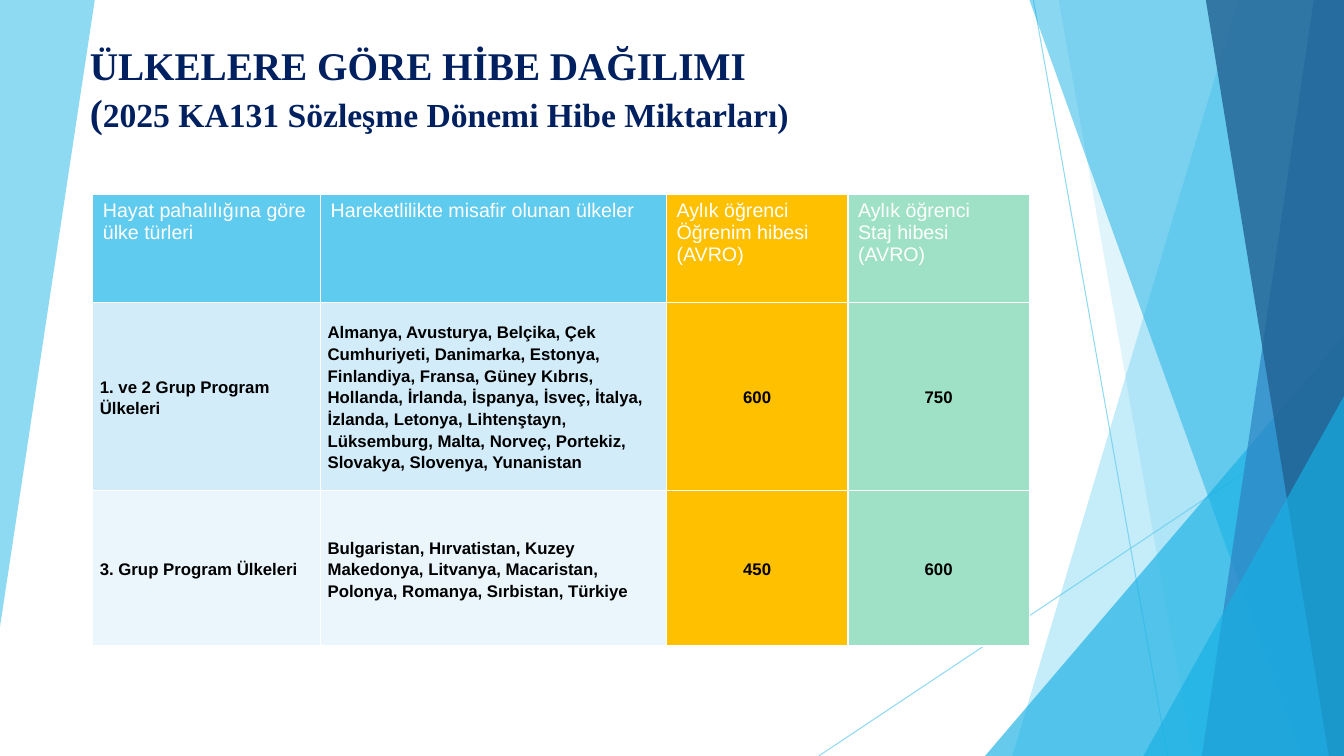
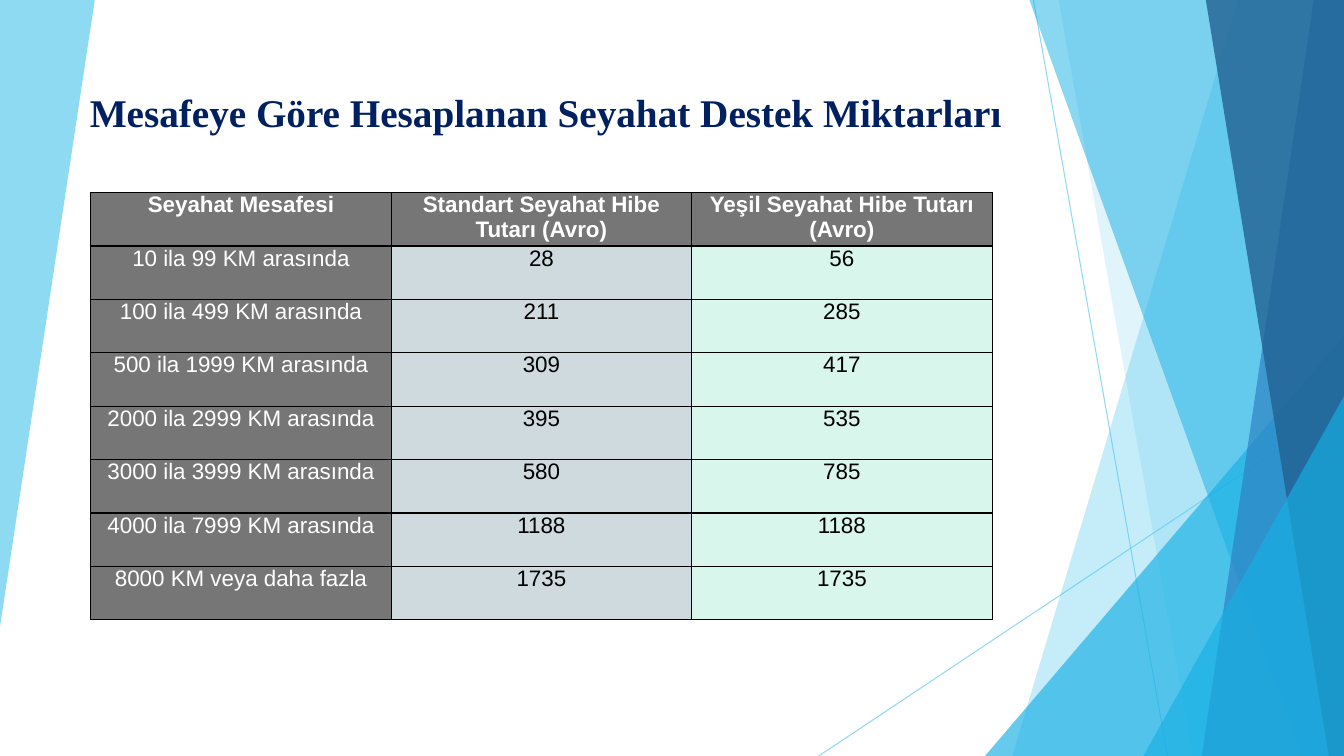
from dataclasses import dataclass

from lxml import etree
from pptx import Presentation
from pptx.dml.color import RGBColor
from pptx.enum.shapes import MSO_CONNECTOR, MSO_SHAPE
from pptx.enum.text import MSO_ANCHOR, MSO_AUTO_SIZE, PP_ALIGN
from pptx.oxml.ns import qn
from pptx.util import Inches, Pt

LEFT, CENTER = PP_ALIGN.LEFT, PP_ALIGN.CENTER
TOP, MIDDLE, BOTTOM = MSO_ANCHOR.TOP, MSO_ANCHOR.MIDDLE, MSO_ANCHOR.BOTTOM
STRAIGHT, TRIANGLE = MSO_CONNECTOR.STRAIGHT, MSO_SHAPE.RIGHT_TRIANGLE
TRIANGLE = MSO_SHAPE.ISOSCELES_TRIANGLE
NO_AUTOFIT = MSO_AUTO_SIZE.NONE

SLIDE_W, SLIDE_H = 13.33, 7.5
TITLE_FONT, BODY_FONT = "Times New Roman", "Arial"

WHITE = RGBColor(0xFF, 0xFF, 0xFF)
BLACK = RGBColor(0x00, 0x00, 0x00)
NAVY = RGBColor(0x00, 0x20, 0x60)
SKY = RGBColor(0x5F, 0xCB, 0xEF)
CYAN = RGBColor(0x17, 0xB0, 0xE4)
BLUE = RGBColor(0x2E, 0x83, 0xC3)
DEEP_BLUE = RGBColor(0x22, 0x62, 0x92)
PALE_SKY = RGBColor(0xD2, 0xEC, 0xF9)
PALER_SKY = RGBColor(0xEA, 0xF6, 0xFC)
AMBER = RGBColor(0xFF, 0xC0, 0x00)
GREEN = RGBColor(0x9F, 0xE1, 0xC6)
GREY = RGBColor(0x76, 0x76, 0x76)
BLUE_GREY = RGBColor(0xCF, 0xDA, 0xDF)
MINT = RGBColor(0xD9, 0xF6, 0xEC)


@dataclass(frozen=True)
class CellStyle:
    size: int
    color: RGBColor
    bold: bool = False
    align: PP_ALIGN = LEFT
    anchor: MSO_ANCHOR = TOP
    margin_x: float = 0
    margin_y: float = 0
    spacing: float = 1.0


class Deck:
    def __init__(self):
        self.prs = Presentation()
        self.prs.slide_width = Inches(SLIDE_W)
        self.prs.slide_height = Inches(SLIDE_H)
        self.s = None

    def new_slide(self, title_runs):
        self.s = self.prs.slides.add_slide(self.prs.slide_layouts[5])
        self.backdrop()
        self.title(title_runs)

    # Shared backdrop
    def backdrop(self):
        self.polygon([(0, 0), (0.94, 0), (0, 6.22)], SKY, 70)
        self.line(10.25, 0, 11.58, SLIDE_H)
        self.line(SLIDE_W, 4.03, 8.12, SLIDE_H)
        self.band(12.28, 10.04, SKY, 36)
        self.band(10.5, 11.83, SKY, 20)
        self.corner(9.77, 3.33)
        self.band(10.21, 12.91, CYAN, 50)
        self.band(13.03, 11.92, BLUE, 70)
        self.band(11.96, 13.18, DEEP_BLUE, 80)
        self.corner(11.34, 3.93)

    def alpha(self, shape, percent):
        for clr in shape._element.spPr.iter(qn("a:srgbClr")):
            etree.SubElement(clr, qn("a:alpha")).set("val", str(percent * 1000))

    def paint(self, shape, color, opacity):
        shape.shadow.inherit = False
        shape.fill.solid()
        shape.fill.fore_color.rgb = color
        shape.line.fill.background()
        self.alpha(shape, opacity)

    def polygon(self, points, color, opacity):
        first, *rest = [(Inches(x), Inches(y)) for x, y in points]
        builder = self.s.shapes.build_freeform(*first)
        builder.add_line_segments(rest, close=True)
        self.paint(builder.convert_to_shape(), color, opacity)

    def band(self, top_x, bottom_x, color, opacity):
        """Fill from a slanted left edge to the right edge of the slide."""
        self.polygon([(top_x, 0), (SLIDE_W, 0), (SLIDE_W, SLIDE_H),
                      (bottom_x, SLIDE_H)], color, opacity)

    def corner(self, x, y):
        """Triangle that fills the bottom right corner."""
        shape = self.s.shapes.add_shape(TRIANGLE, Inches(x), Inches(y),
                                        Inches(SLIDE_W - x), Inches(SLIDE_H - y))
        shape.adjustments[0] = 1
        self.paint(shape, CYAN, 66)

    def line(self, x1, y1, x2, y2):
        line = self.s.shapes.add_connector(STRAIGHT, Inches(x1), Inches(y1),
                                           Inches(x2), Inches(y2))
        line.line.color.rgb = SKY
        line.line.width = Pt(0.75)
        self.alpha(line, 70)
        etree.SubElement(line._element.spPr, qn("a:effectLst"))

    # Text
    def run(self, p, text, font, size, color, bold):
        for i, part in enumerate(text.split("\n")):
            if i:
                p.add_line_break()
            if part:
                r = p.add_run()
                r.text = part
                r.font.name, r.font.size = font, Pt(size)
                r.font.bold, r.font.color.rgb = bold, color

    def title(self, runs):
        title = self.s.shapes.title
        title.left, title.top = Inches(0.79), Inches(0.63)
        title.width, title.height = Inches(9.43), Inches(0.76)
        self.s.shapes._spTree.append(title._element)  # in front of the backdrop
        tf = title.text_frame
        tf.word_wrap, tf.auto_size = True, NO_AUTOFIT
        tf.vertical_anchor = BOTTOM
        p = tf.paragraphs[0]
        p.alignment = LEFT
        for text, size in runs:
            self.run(p, text, TITLE_FONT, size, NAVY, True)

    # Tables
    def table(self, x, y, widths, heights, rows, fills, styles, border):
        """Each row of texts has a row of fills and a row of styles."""
        frame = self.s.shapes.add_table(len(rows), len(widths), Inches(x), Inches(y),
                                        Inches(sum(widths)), Inches(sum(heights)))
        table = frame.table
        table.first_row = table.horz_banding = False
        for column, width in zip(table.columns, widths):
            column.width = Inches(width)
        for row, height, texts, colors, looks in zip(table.rows, heights, rows,
                                                     fills, styles):
            row.height = Inches(height)
            for cell, text, color, look in zip(row.cells, texts, colors, looks):
                self.cell(cell, text, color, look)
                self.borders(cell, border)

    def cell(self, cell, text, color, style):
        cell.fill.solid()
        cell.fill.fore_color.rgb = color
        cell.vertical_anchor = style.anchor
        cell.margin_left = cell.margin_right = Inches(style.margin_x)
        cell.margin_top = cell.margin_bottom = Inches(style.margin_y)
        p = cell.text_frame.paragraphs[0]
        p.alignment, p.line_spacing = style.align, style.spacing
        self.run(p, text, BODY_FONT, style.size, style.color, style.bold)

    def borders(self, cell, color):
        tc_pr = cell._tc.get_or_add_tcPr()
        for i, side in enumerate(("a:lnL", "a:lnR", "a:lnT", "a:lnB")):
            ln = etree.Element(qn(side), w=str(Pt(1)))
            fill = etree.SubElement(ln, qn("a:solidFill"))
            etree.SubElement(fill, qn("a:srgbClr"), val=str(color))
            tc_pr.insert(i, ln)


def country_grants(deck):
    deck.new_slide([("ÜLKELERE GÖRE HİBE DAĞILIMI\n(", 28),
                    ("2025 KA131 Sözleşme Dönemi Hibe Miktarları)", 24)])
    head = CellStyle(14, WHITE, margin_x=0.1, margin_y=0.05)
    name = CellStyle(12, BLACK, True, LEFT, MIDDLE, 0.07, spacing=1.15)
    amount = CellStyle(12, BLACK, True, CENTER, MIDDLE, 0.07, spacing=1.15)
    rows = [
        ("Hayat pahalılığına göre ülke türleri",
         "Hareketlilikte misafir olunan ülkeler",
         "Aylık öğrenci Öğrenim hibesi (AVRO)",
         "Aylık öğrenci\nStaj hibesi (AVRO)"),
        ("1. ve 2 Grup Program Ülkeleri",
         "Almanya, Avusturya, Belçika, Çek Cumhuriyeti, Danimarka, Estonya, "
         "Finlandiya, Fransa, Güney Kıbrıs, Hollanda, İrlanda, İspanya, İsveç, "
         "İtalya, İzlanda, Letonya, Lihtenştayn, Lüksemburg, Malta, Norveç, "
         "Portekiz, Slovakya, Slovenya, Yunanistan",
         "600", "750"),
        ("3. Grup Program Ülkeleri",
         "Bulgaristan, Hırvatistan, Kuzey Makedonya, Litvanya, Macaristan, "
         "Polonya, Romanya, Sırbistan, Türkiye",
         "450", "600"),
    ]
    fills = [(c, c, AMBER, GREEN) for c in (SKY, PALE_SKY, PALER_SKY)]
    styles = [[head] * 4] + [[name, name, amount, amount]] * 2
    deck.table(0.92, 1.93, [2.26, 3.43, 1.8, 1.8], [1.07, 1.87, 1.54],
               rows, fills, styles, WHITE)


def travel_support(deck):
    deck.new_slide([("Mesafeye Göre Hesaplanan Seyahat Destek Miktarları", 28)])
    head = CellStyle(16, WHITE, True, CENTER)
    distance = CellStyle(16, WHITE, align=CENTER)
    amount = CellStyle(16, BLACK, align=CENTER)
    rows = [
        ("Seyahat Mesafesi", "Standart Seyahat Hibe Tutarı (Avro)",
         "Yeşil Seyahat Hibe Tutarı (Avro)"),
        ("10 ila 99 KM arasında", "28", "56"),
        ("100 ila 499 KM arasında", "211", "285"),
        ("500 ila 1999 KM arasında", "309", "417"),
        ("2000 ila 2999 KM arasında", "395", "535"),
        ("3000 ila 3999 KM arasında", "580", "785"),
        ("4000 ila 7999 KM arasında", "1188", "1188"),
        ("8000 KM veya daha fazla", "1735", "1735"),
    ]
    body = len(rows) - 1
    fills = [[GREY] * 3] + [[GREY, BLUE_GREY, MINT]] * body
    styles = [[head] * 3] + [[distance, amount, amount]] * body
    deck.table(0.9, 1.91, [2.98] * 3, [0.53] * len(rows),
               rows, fills, styles, BLACK)


def main():
    deck = Deck()
    country_grants(deck)
    travel_support(deck)
    deck.prs.save("out.pptx")


if __name__ == "__main__":
    main()
